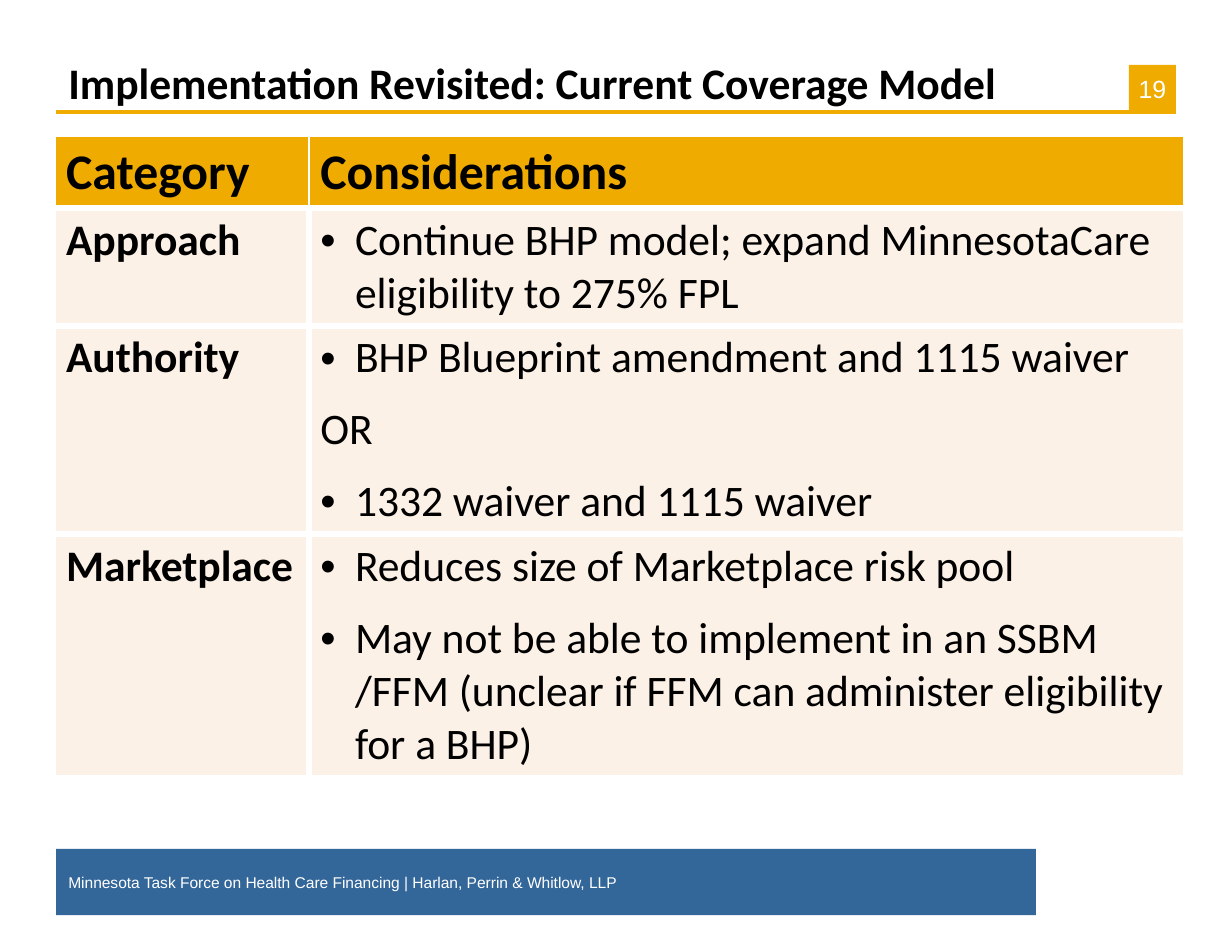
"""Build the coverage model slide with its considerations table."""
from lxml.etree import SubElement
from pptx import Presentation
from pptx.dml.color import RGBColor
from pptx.enum.shapes import MSO_CONNECTOR, MSO_SHAPE
from pptx.enum.text import MSO_ANCHOR, PP_ALIGN
from pptx.oxml.ns import qn
from pptx.util import Inches, Pt

GOLD = RGBColor(0xF0, 0xAB, 0x00)
BLUE = RGBColor(0x33, 0x66, 0x99)
CREAM = RGBColor(0xFC, 0xF1, 0xE7)
WHITE = RGBColor(0xFF, 0xFF, 0xFF)
BLACK = RGBColor(0, 0, 0)

ROWS = [
    ("Category", ["Considerations"]),
    ("Approach", ["• Continue BHP model; expand MinnesotaCare eligibility to 275% FPL"]),
    ("Authority", ["• BHP Blueprint amendment and 1115 waiver", "OR",
                   "• 1332 waiver and 1115 waiver"]),
    ("Marketplace", ["• Reduces size of Marketplace risk pool",
                     "• May not be able to implement in an SSBM /FFM "
                     "(unclear if FFM can administer eligibility for a BHP)"]),
]
WIDTHS = [2.27, 7.81]
HEIGHTS = [0.64, 1.05, 1.86, 2.16]


class Deck:
    def __init__(self, slide):
        self.slide = slide
        self.shapes = slide.shapes

    def style(self, para, size, face, color, bold=False):
        for run in para.runs:
            font = run.font
            font.size, font.name, font.bold = Pt(size), face, bold
            font.color.rgb = color

    def block(self, box, color):
        shape = self.shapes.add_shape(MSO_SHAPE.RECTANGLE, *map(Inches, box))
        shape.shadow.inherit = False
        shape.fill.solid()
        shape.fill.fore_color.rgb = color
        shape.line.fill.background()
        return shape

    def badge(self, box, text):
        frame = self.block(box, GOLD).text_frame
        self.inset(frame, 0, 0, 0)
        frame.word_wrap = False
        frame.vertical_anchor = MSO_ANCHOR.MIDDLE
        frame.text = text
        frame.paragraphs[0].alignment = PP_ALIGN.CENTER
        self.style(frame.paragraphs[0], 16, "Arial", WHITE)

    def inset(self, frame, left, right, edge):
        frame.margin_left, frame.margin_right = Inches(left), Inches(right)
        frame.margin_top = frame.margin_bottom = Inches(edge)

    def rule(self, left, right, top):
        line = self.shapes.add_connector(
            MSO_CONNECTOR.STRAIGHT, *map(Inches, (left, top, right, top)))
        line.line.color.rgb = GOLD
        line.line.width = Pt(2)
        SubElement(line._element.spPr, qn("a:effectLst"))

    def label(self, box, text, anchor, inset, *style):
        frame = self.shapes.add_textbox(*map(Inches, box)).text_frame
        frame.word_wrap = True
        frame.vertical_anchor = anchor
        self.inset(frame, *inset)
        frame.text = text
        self.style(frame.paragraphs[0], *style)

    def border(self, cell, side, width):
        line = SubElement(cell._tc.get_or_add_tcPr(), qn(f"a:ln{side}"), w=str(Pt(width)))
        SubElement(SubElement(line, qn("a:solidFill")), qn("a:srgbClr"), val=str(WHITE))

    def bullet(self, para):
        props = para._p.get_or_add_pPr()
        props.set("marL", str(Inches(0.31)))
        props.set("indent", str(-Inches(0.31)))
        SubElement(props, qn("a:buFont"), typeface="Arial")
        SubElement(props, qn("a:buChar"), char="•")

    def cell(self, cell, lines, size, bold, color):
        cell.text_frame.text = "\n".join(line.removeprefix("• ") for line in lines)
        for i, (para, line) in enumerate(zip(cell.text_frame.paragraphs, lines)):
            if line.startswith("•"):
                self.bullet(para)
            if i:
                para.space_before = Pt(6)
            para.space_after = Pt(6)
            self.style(para, size, "Calibri", BLACK, bold)
        cell.fill.solid()
        cell.fill.fore_color.rgb = color

    def table(self, left, top):
        box = (left, top, sum(WIDTHS), sum(HEIGHTS))
        grid = self.shapes.add_table(len(ROWS), 2, *map(Inches, box)).table
        grid.horz_banding = False
        for col, width in zip(grid.columns, WIDTHS):
            col.width = Inches(width)
        for r, (name, lines) in enumerate(ROWS):
            grid.rows[r].height = Inches(HEIGHTS[r])
            head = r == 0
            for c, texts in enumerate(([name], lines)):
                cell = grid.cell(r, c)
                inner = 1 if head else 4.5
                self.border(cell, "L", inner if c else 1)
                self.border(cell, "R", 1 if c else inner)
                self.border(cell, "T", 1 if head else 4.5)
                self.border(cell, "B", 1 if r == len(ROWS) - 1 else 4.5)
                self.cell(cell, texts, 32 if head else 28, head or c == 0,
                          GOLD if head else CREAM)


def main():
    prs = Presentation()
    prs.slide_width, prs.slide_height = Inches(11), Inches(8.5)
    deck = Deck(prs.slides.add_slide(prs.slide_layouts[6]))
    deck.block((0.5, 7.58, 8.75, 0.59), BLUE)
    deck.rule(0.5, 10.5, 1)
    deck.badge((10.08, 0.58, 0.42, 0.42), "19")
    deck.label((0.5, 0.45, 9.58, 0.58), "Implementation Revisited: Current Coverage Model",
               MSO_ANCHOR.BOTTOM, (0.11, 0.11, 0.06), 28, "Calibri", BLACK, True)
    deck.table(0.49, 1.22)
    deck.label((0.5, 7.75, 7.08, 0.25),
               "Minnesota Task Force on Health Care Financing | Harlan, Perrin & Whitlow, LLP",
               MSO_ANCHOR.MIDDLE, (0.11, 0, 0), 10, "Arial", WHITE)
    prs.save("out.pptx")


if __name__ == "__main__":
    main()
